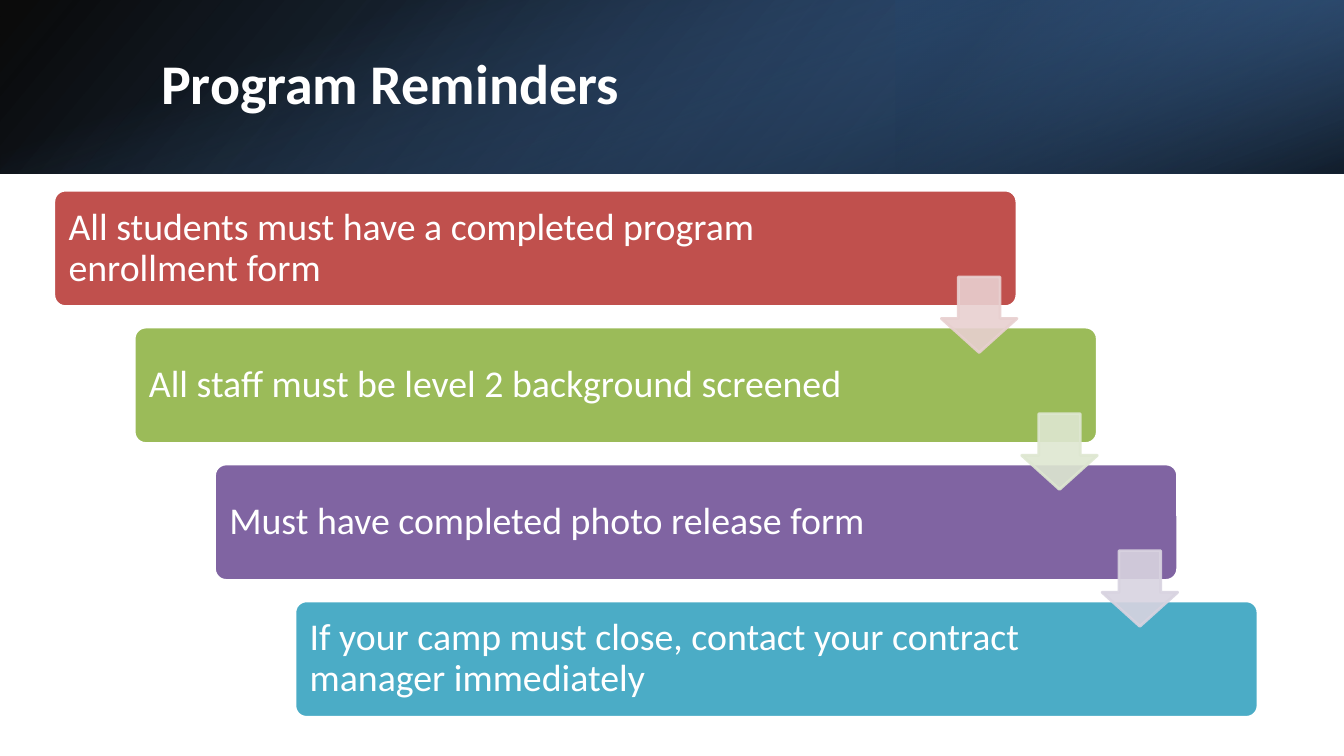
import pptx
import pptx.util
import pptx.dml.color
import pptx.enum.shapes
import pptx.enum.text
import lxml.etree

Pt = pptx.util.Pt
SHAPE = pptx.enum.shapes.MSO_SHAPE
A = "{http://schemas.openxmlformats.org/drawingml/2006/main}"


def rgb(value):
    return pptx.dml.color.RGBColor.from_string(value)


def add_text(box, text, size, bold=False):
    tf = box.text_frame
    tf.word_wrap = True
    tf.vertical_anchor = pptx.enum.text.MSO_ANCHOR.MIDDLE
    p = tf.paragraphs[0]
    p.line_spacing = 0.9
    r = p.add_run()
    r.text = text
    r.font.name = "Calibri"
    r.font.size = Pt(size)
    r.font.bold = bold
    r.font.color.rgb = rgb("FFFFFF")
    return tf


prs = pptx.Presentation()
prs.slide_width, prs.slide_height = Pt(960), Pt(540)
s = prs.slides.add_slide(prs.slide_layouts[6])

# Header band: box, rotation, flip, angle, stops (position, colour, opacity %)
header = [
    ((0, 0, 960, 124), 0, True, 140, [(0, "000000", 96), (1, "376092", 100)]),
    ((640, 0, 320, 124), 180, True, 320, [(0.19, "254061", 68), (1, "4F81BD", 79)]),
    ((418, -418, 124, 960), 90, False, 340, [(0.23, "4F81BD", 0), (0.99, "000000", 74)]),
]
for box, rotation, flip, angle, stops in header:
    sp = s.shapes.add_shape(SHAPE.RECTANGLE, *map(Pt, box))
    sp.shadow.inherit = False
    sp.line.fill.background()
    sp.rotation = rotation
    if flip:
        sp._element.spPr.find(A + "xfrm").set("flipH", "1")
    sp.fill.gradient()
    sp.fill.gradient_angle = 360 - angle
    for stop, (position, color, _) in zip(sp.fill.gradient_stops, stops):
        stop.position = position
        stop.color.rgb = rgb(color)
    for clr, (_, _, opacity) in zip(sp._element.spPr.iter(A + "srgbClr"), stops):
        lxml.etree.SubElement(clr, A + "alpha", val=str(opacity * 1000))

# Title
title = s.shapes.add_textbox(Pt(108), Pt(27.4), Pt(790), Pt(69))
add_text(title, "Program Reminders", 40, bold=True)

# Staircase of reminders: text, text width, fill
steps = [
    ("All students must have a completed program enrollment form", 592, "C0504D"),
    ("All staff must be level 2 background screened", 572, "9BBB59"),
    ("Must have completed photo release form", 572, "8064A2"),
    ("If your camp must close, contact your contract manager immediately", 572, "4BACC6"),
]
LEFT, TOP, STEP_X, STEP_Y = 38.4, 135.8, 57.4, 97.8
for i, (text, width, color) in enumerate(steps):
    x, y = LEFT + i * STEP_X, TOP + i * STEP_Y
    sp = s.shapes.add_shape(SHAPE.ROUNDED_RECTANGLE, Pt(x), Pt(y), Pt(688), Pt(83.2))
    sp.shadow.inherit = False
    sp.adjustments[0] = 0.1
    sp.fill.solid()
    sp.fill.fore_color.rgb = rgb(color)
    sp.line.color.rgb = rgb("FFFFFF")
    sp.line.width = Pt(2)
    label = s.shapes.add_textbox(Pt(x + 2.6), Pt(y + 2.4), Pt(width), Pt(78.4))
    tf = add_text(label, text, 27)
    tf.margin_left = tf.margin_right = tf.margin_top = tf.margin_bottom = Pt(8)

# Arrows between the steps
for i, color in enumerate(["E8D0D0", "DEE7D1", "D8D3E0"]):
    x, y = LEFT + 634 + i * STEP_X, TOP + 62 + i * STEP_Y
    sp = s.shapes.add_shape(SHAPE.DOWN_ARROW, Pt(x), Pt(y), Pt(54), Pt(54))
    sp.shadow.inherit = False
    sp.adjustments[0], sp.adjustments[1] = 0.55, 0.45
    sp.fill.solid()
    sp.fill.fore_color.rgb = rgb(color)
    sp.line.color.rgb = rgb(color)
    sp.line.width = Pt(2)
    for clr in sp._element.spPr.iter(A + "srgbClr"):
        lxml.etree.SubElement(clr, A + "alpha", val="90000")

prs.save("out.pptx")
